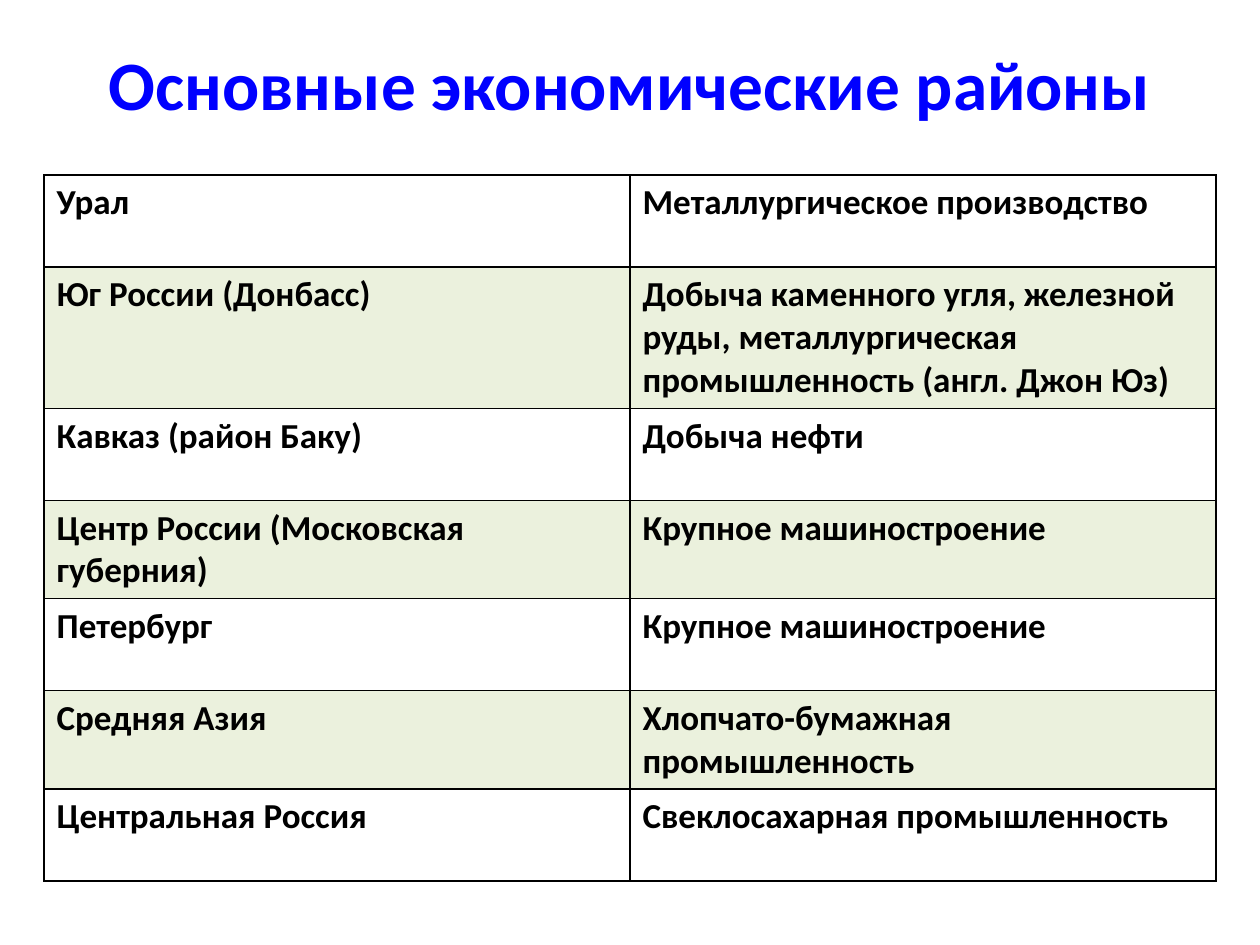
from lxml.etree import SubElement
from pptx import Presentation
from pptx.dml.color import RGBColor
from pptx.enum.text import MSO_ANCHOR, PP_ALIGN
from pptx.oxml.ns import qn
from pptx.util import Inches, Pt

COLORS = {"title": "0000FF", "text": "000000", "border": "000000", "band": "9BBB59"}
BAND_ALPHA = 20
FORMATS = {
    "title": {"name": "Calibri", "size": Pt(39.6), "bold": True},
    "text": {"name": "Calibri", "size": Pt(20), "bold": True},
}
REGIONS = [
    ("Урал", "Металлургическое производство"),
    ("Юг России (Донбасс)",
     "Добыча каменного угля, железной руды, металлургическая промышленность (англ. Джон Юз)"),
    ("Кавказ (район Баку)", "Добыча нефти"),
    ("Центр России (Московская губерния)", "Крупное машиностроение"),
    ("Петербург", "Крупное машиностроение"),
    ("Средняя Азия", "Хлопчато-бумажная промышленность"),
    ("Центральная Россия", "Свеклосахарная промышленность"),
]


def format_font(font, role):
    for attribute, value in FORMATS[role].items():
        setattr(font, attribute, value)
    font.color.rgb = RGBColor.from_string(COLORS[role])


def add_borders(cell):
    properties = cell._tc.get_or_add_tcPr()
    for side in ("a:lnL", "a:lnR", "a:lnT", "a:lnB"):
        line = SubElement(properties, qn(side), w=str(Pt(1)))
        fill = SubElement(line, qn("a:solidFill"))
        SubElement(fill, qn("a:srgbClr"), val=COLORS["border"])


presentation = Presentation()
presentation.slide_width = Inches(10)
presentation.slide_height = Inches(7.5)
slide = presentation.slides.add_slide(presentation.slide_layouts[5])

title = slide.shapes.title
title.left, title.top = Inches(0.5), Inches(0.17)
title.width, title.height = Inches(9), Inches(0.98)
title.text_frame.text = "Основные экономические районы"
title.text_frame.vertical_anchor = MSO_ANCHOR.MIDDLE
title_paragraph = title.text_frame.paragraphs[0]
title_paragraph.alignment = PP_ALIGN.CENTER
format_font(title_paragraph.runs[0].font, "title")

table = slide.shapes.add_table(
    len(REGIONS), 2, Inches(0.35), Inches(1.39), Inches(9.3), Inches(0.73 * len(REGIONS))
).table
table.first_row = False
table.horz_banding = False
for column in table.columns:
    column.width = Inches(4.65)

for row_index, region in enumerate(REGIONS):
    table.rows[row_index].height = Inches(0.73)
    for column_index, text in enumerate(region):
        cell = table.cell(row_index, column_index)
        cell.text = text
        format_font(cell.text_frame.paragraphs[0].runs[0].font, "text")
        add_borders(cell)
        if row_index % 2:
            cell.fill.solid()
            cell.fill.fore_color.rgb = RGBColor.from_string(COLORS["band"])
            band_color = cell._tc.tcPr.find(qn("a:solidFill")).find(qn("a:srgbClr"))
            SubElement(band_color, qn("a:alpha"), val=str(BAND_ALPHA * 1000))
        else:
            cell.fill.background()

presentation.save("out.pptx")
